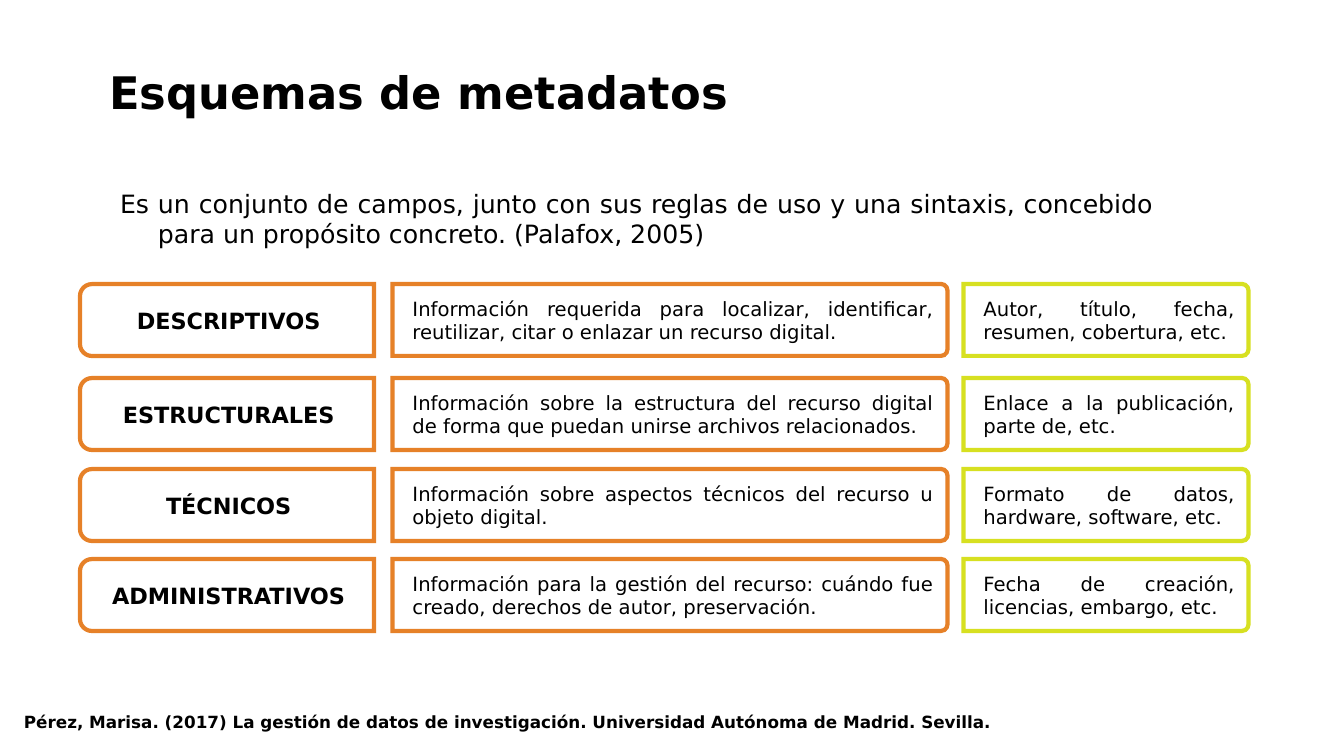
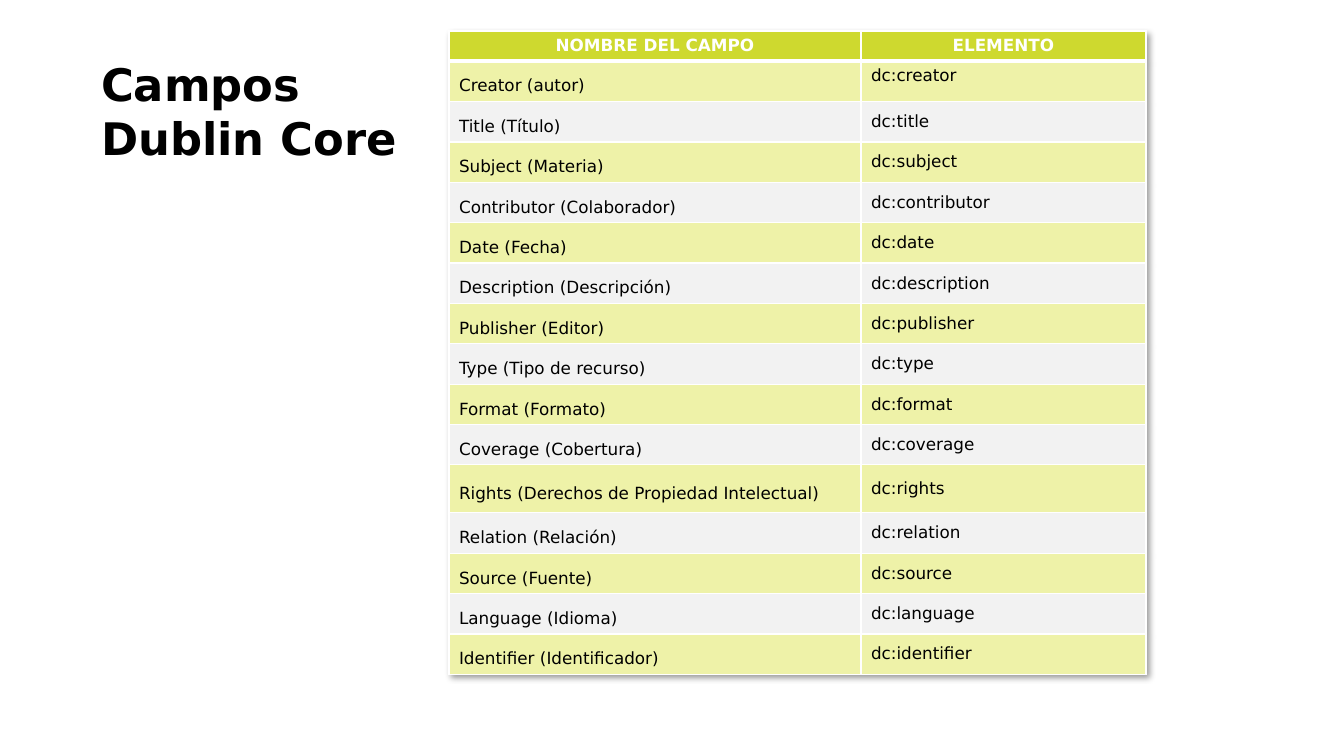
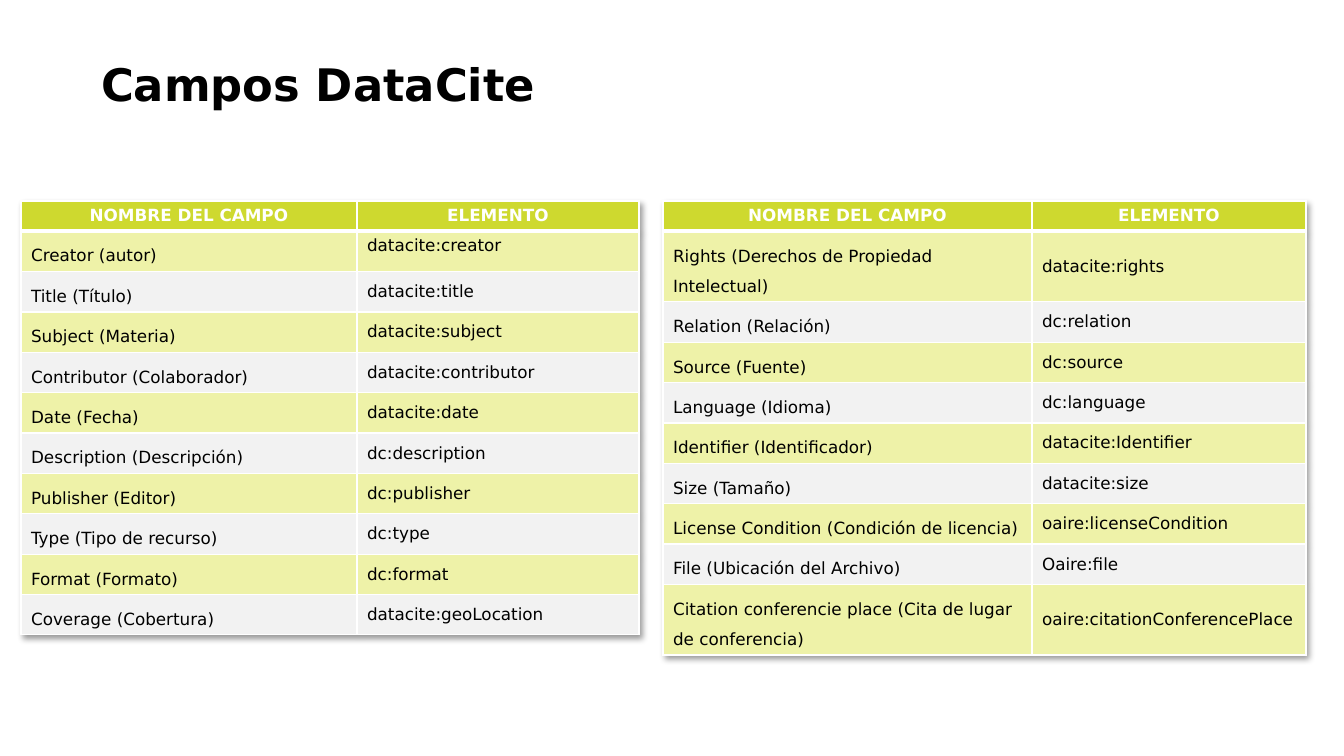
"""Build three slides on metadata schemas and their fields."""
import dataclasses
import typing

import lxml.etree
import pptx
import pptx.dml.color
import pptx.enum.shapes
import pptx.enum.text
import pptx.oxml.ns
import pptx.util

SCALE = 914400 / 100.8
FONT = "DejaVu Sans"
BLACK, WHITE = "000000", "FFFFFF"
ORANGE, LIME = "E68128", "D7E021"
HEADER_FILL = "CED92F"
ROW_FILLS = ("EEF2A8", "F2F2F2")
HEADINGS = ("NOMBRE DEL CAMPO", "ELEMENTO")
LEFT = pptx.enum.text.PP_ALIGN.LEFT
CENTER = pptx.enum.text.PP_ALIGN.CENTER
JUSTIFY = pptx.enum.text.PP_ALIGN.JUSTIFY
TOP = pptx.enum.text.MSO_ANCHOR.TOP
MIDDLE = pptx.enum.text.MSO_ANCHOR.MIDDLE


class Frame(typing.NamedTuple):
    """A rectangle in px."""
    left: int
    top: int
    width: int
    height: int


@dataclasses.dataclass(frozen=True)
class TextStyle:
    """The look of a paragraph."""
    size: int
    bold: bool = False
    color: str = BLACK
    align: typing.Any = LEFT
    line_spacing: float = 1.0


@dataclasses.dataclass(frozen=True)
class CardColumn:
    """A column of rotated cards, rounded on one side."""
    center: int
    width: int
    line: str
    style: TextStyle
    rounded_right: bool


@dataclasses.dataclass(frozen=True)
class FieldTable:
    """A table of field names and their elements."""
    left: int
    top: int
    columns: tuple[int, int]
    header_height: int
    row_height: int
    rows: list[tuple[str, str]]
    first_anchor: typing.Any = TOP
    tall_rows: dict[str, int] = dataclasses.field(default_factory=dict)


TITLE = TextStyle(32, bold=True)
DEFINITION = TextStyle(18, align=JUSTIFY)
CITATION = TextStyle(12, bold=True)
CARD_NAME = TextStyle(16, bold=True, align=CENTER)
CARD_TEXT = TextStyle(14, align=JUSTIFY)
TABLE_HEAD = TextStyle(12, bold=True, color=WHITE, align=CENTER)
TABLE_BODY = (TextStyle(12, line_spacing=1.5), TextStyle(12))

CARD_HEIGHT = 72
CARD_COLUMNS = (
    CardColumn(227, 294, ORANGE, CARD_NAME, False),
    CardColumn(670, 555, ORANGE, CARD_TEXT, True),
    CardColumn(1106, 285, LIME, CARD_TEXT, True),
)
CARD_ROWS = {
    320: ("DESCRIPTIVOS",
          "Información requerida para localizar, identificar, reutilizar, citar o enlazar un recurso digital.",
          "Autor, título, fecha, resumen, cobertura, etc."),
    414: ("ESTRUCTURALES",
          "Información sobre la estructura del recurso digital de forma que puedan unirse archivos relacionados.",
          "Enlace a la publicación, parte de, etc."),
    505: ("TÉCNICOS",
          "Información sobre aspectos técnicos del recurso u objeto digital.",
          "Formato de datos, hardware, software, etc."),
    595: ("ADMINISTRATIVOS",
          "Información para la gestión del recurso: cuándo fue creado, derechos de autor, preservación.",
          "Fecha de creación, licencias, embargo, etc."),
}

RIGHTS = "Rights (Derechos de Propiedad Intelectual)"
FIELDS = (
    "Creator (autor)", "Title (Título)", "Subject (Materia)", "Contributor (Colaborador)",
    "Date (Fecha)", "Description (Descripción)", "Publisher (Editor)", "Type (Tipo de recurso)",
    "Format (Formato)", "Coverage (Cobertura)", RIGHTS, "Relation (Relación)",
    "Source (Fuente)", "Language (Idioma)", "Identifier (Identificador)",
)
DATACITE_FIELDS = FIELDS + (
    "Size (Tamaño)", "License Condition (Condición de licencia)",
    "File (Ubicación del Archivo)", "Citation conferencie place (Cita de lugar de conferencia)",
)
DATACITE_ELEMENTS = (
    "datacite:creator", "datacite:title", "datacite:subject", "datacite:contributor",
    "datacite:date", "dc:description", "dc:publisher", "dc:type", "dc:format",
    "datacite:geoLocation", "datacite:rights", "dc:relation", "dc:source", "dc:language",
    "datacite:Identifier", "datacite:size", "oaire:licenseCondition", "Oaire:file",
    "oaire:citationConferencePlace",
)
DUBLIN_ROWS = [(name, "dc:" + name.split()[0].lower()) for name in FIELDS]
DATACITE_ROWS = list(zip(DATACITE_FIELDS, DATACITE_ELEMENTS))

DUBLIN_TABLE = FieldTable(449, 31, (412, 285), 30, 37, DUBLIN_ROWS, tall_rows={RIGHTS: 48})
DATACITE_TABLES = (
    FieldTable(21, 201, (336, 282), 24, 31, DATACITE_ROWS[:10]),
    FieldTable(663, 201, (369, 274), 24, 31, DATACITE_ROWS[10:], first_anchor=MIDDLE),
)


def px(length: float) -> int:
    """Turn px into EMU."""
    return pptx.util.Emu(round(length * SCALE))


def rgb(color: str) -> pptx.dml.color.RGBColor:
    """Turn a hex string into a colour."""
    return pptx.dml.color.RGBColor.from_string(color)


def add_xml(parent: typing.Any, tag: str, **values: typing.Any) -> typing.Any:
    """Append a drawing element with its attributes."""
    texts = {key: str(value) for key, value in values.items()}
    return lxml.etree.SubElement(parent, pptx.oxml.ns.qn("a:" + tag), texts)


def set_all(target: typing.Any, values: dict[str, typing.Any]) -> None:
    """Set each named attribute on the target."""
    for name, value in values.items():
        setattr(target, name, value)


def write(text_frame: typing.Any, text: str, style: TextStyle) -> None:
    """Write one formatted paragraph."""
    para = text_frame.paragraphs[0]
    set_all(para, {"alignment": style.align, "line_spacing": style.line_spacing})
    span = para.add_run()
    span.text = text
    set_all(span.font, {"name": FONT, "size": pptx.util.Pt(style.size), "bold": style.bold})
    span.font.color.rgb = rgb(style.color)


def fill_box(box: typing.Any, frame: Frame, text: str, style: TextStyle) -> None:
    """Place a text box or placeholder and write its text."""
    set_all(box, {name: px(value) for name, value in frame._asdict().items()})
    set_all(box.text_frame, {
        "word_wrap": True, "vertical_anchor": TOP,
        "auto_size": pptx.enum.text.MSO_AUTO_SIZE.SHAPE_TO_FIT_TEXT,
    })
    write(box.text_frame, text, style)


def add_page(deck: typing.Any, layout: int, title: str, frame: Frame) -> typing.Any:
    """Add a slide with its title."""
    page = deck.slides.add_slide(deck.slide_layouts[layout])
    fill_box(page.shapes.title, frame, title, TITLE)
    return page


def add_card(page: typing.Any, column: CardColumn, middle: int, text: str) -> None:
    """Draw one outlined card standing on its side, with level text."""
    card = page.shapes.add_shape(
        pptx.enum.shapes.MSO_SHAPE.ROUND_2_SAME_RECTANGLE,
        px(column.center - CARD_HEIGHT / 2), px(middle - column.width / 2),
        px(CARD_HEIGHT), px(column.width))
    card.rotation = 270
    card.shadow.inherit = False
    card.fill.background()
    card.line.color.rgb = rgb(column.line)
    card.line.width = pptx.util.Pt(3)
    properties = card.element.spPr
    add_xml(properties.find(pptx.oxml.ns.qn("a:ln")), "miter", lim=800000)
    set_all(card.text_frame, {"word_wrap": True, "vertical_anchor": MIDDLE})
    if column.rounded_right:
        card.adjustments[0] = 0.09
        properties.get_or_add_xfrm().set("flipV", "1")
        set_all(card.text_frame, {
            "margin_left": px(12), "margin_top": px(12),
            "margin_right": px(12), "margin_bottom": px(20),
        })
    card.element.txBody.bodyPr.set("vert", "vert270" if column.rounded_right else "vert")
    write(card.text_frame, text, column.style)


def paint_cell(cell: typing.Any, row: int, fill: str) -> None:
    """Give a cell white borders and a fill, with a thick rule under the header."""
    properties = cell._tc.get_or_add_tcPr()
    for side in "LRTB":
        thick = (row, side) in ((0, "B"), (1, "T"))
        line = add_xml(properties, "ln" + side, w=pptx.util.Pt(3 if thick else 1))
        add_xml(add_xml(line, "solidFill"), "srgbClr", val=WHITE)
    cell.fill.solid()
    cell.fill.fore_color.rgb = rgb(fill)


def add_table_shadow(table: typing.Any) -> None:
    """Give a table a soft shadow at its lower right."""
    properties = table._tbl.tblPr
    effects = add_xml(properties, "effectLst")
    shadow = add_xml(effects, "outerShdw", blurRad=50800, dist=38100, dir=2700000,
                     algn="tl", rotWithShape=0)
    add_xml(add_xml(shadow, "srgbClr", val=BLACK), "alpha", val=40000)
    properties.insert(0, effects)


def add_field_table(page: typing.Any, layout: FieldTable) -> None:
    """Draw a table of fields with banded rows."""
    heights = [layout.header_height]
    heights += [layout.tall_rows.get(name, layout.row_height) for name, _ in layout.rows]
    table = page.shapes.add_table(
        len(heights), len(layout.columns), px(layout.left), px(layout.top),
        px(sum(layout.columns)), px(sum(heights))).table
    add_table_shadow(table)
    for column, width in zip(table.columns, layout.columns):
        column.width = px(width)
    for row, texts in enumerate([HEADINGS, *layout.rows]):
        table.rows[row].height = px(heights[row])
        fill = ROW_FILLS[(row - 1) % 2] if row else HEADER_FILL
        anchor = (TOP, layout.first_anchor, MIDDLE)[min(row, 2)]
        for column, text in enumerate(texts):
            cell = table.cell(row, column)
            paint_cell(cell, row, fill)
            cell.vertical_anchor = anchor
            write(cell.text_frame, text, TABLE_BODY[column] if row else TABLE_HEAD)


def build_schemas(deck: typing.Any) -> None:
    """Build the slide on kinds of metadata."""
    page = add_page(deck, 1, "Esquemas de metadatos", Frame(99, 60, 1049, 64))
    body = page.placeholders[1]
    para = body.text_frame.paragraphs[0]
    properties = para._p.get_or_add_pPr()
    set_all(properties, {"marL": 0, "indent": 0})
    add_xml(properties, "buNone")
    para.space_before = pptx.util.Pt(0)
    fill_box(body, Frame(110, 183, 1054, 72),
             "Es un conjunto de campos, junto con sus reglas de uso y una sintaxis, "
             "concebido para un propósito concreto. (Palafox, 2005)", DEFINITION)
    for middle, texts in CARD_ROWS.items():
        for column, text in zip(CARD_COLUMNS, texts):
            add_card(page, column, middle, text)
    fill_box(page.shapes.add_textbox(0, 0, 0, 0), Frame(14, 707, 1007, 30),
             "Pérez, Marisa. (2017) La gestión de datos de investigación. "
             "Universidad Autónoma de Madrid. Sevilla.", CITATION)


def main() -> None:
    """Build and save the deck."""
    deck = pptx.Presentation()
    set_all(deck, {"slide_width": px(1344), "slide_height": px(756)})
    build_schemas(deck)
    dublin = add_page(deck, 5, "Campos Dublin Core", Frame(91, 52, 358, 119))
    add_field_table(dublin, DUBLIN_TABLE)
    datacite = add_page(deck, 5, "Campos DataCite", Frame(91, 52, 530, 64))
    for layout in DATACITE_TABLES:
        add_field_table(datacite, layout)
    deck.save("out.pptx")


if __name__ == "__main__":
    main()
